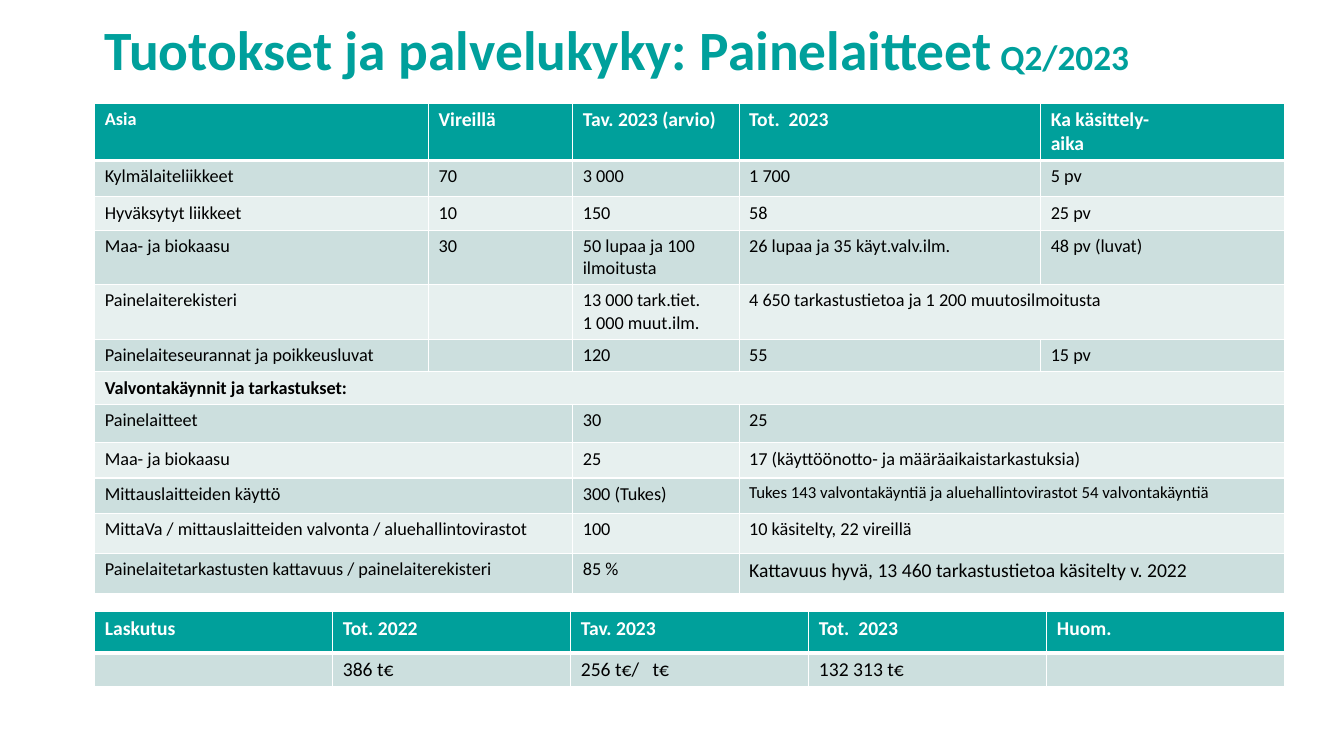
import pptx
import pptx.dml.color
import pptx.enum.text
import pptx.oxml
import pptx.oxml.ns
import pptx.util

THEME = {
    "font": "Calibri",
    "title": "00A09C", "header": "00A09B", "header_text": "FFFFFF", "border": "FFFFFF",
    "text": "000000", "bands": ("CCDFDE", "E7F0EF"),
    "title_size": 39.6, "quarter_size": 25.2,
    "large": 14, "body": 13, "small": 12,
    "thin_line": 1, "thick_line": 3,
}

presentation = pptx.Presentation()
presentation.slide_width = pptx.util.Inches(13.33)
presentation.slide_height = pptx.util.Inches(7.5)
WIDTH, HEIGHT = presentation.slide_width, presentation.slide_height
LEFT, TABLE_WIDTH = int(WIDTH * 0.0705), int(WIDTH * 0.8855)
NAMESPACE = pptx.oxml.ns.nsdecls("a")
slide = presentation.slides.add_slide(presentation.slide_layouts[6])


def style_run(run, size, color, bold):
    run.font.name = THEME["font"]
    run.font.size = pptx.util.Pt(size)
    run.font.bold = bold
    run.font.color.rgb = pptx.dml.color.RGBColor.from_string(color)


def add_filled_table(rows, top, column_shares, row_shares, body_size, special):
    """Shares are percentages of table width and slide height; None joins the cell to its left."""
    heights = [int(HEIGHT * share / 100) for share in row_shares]
    table = slide.shapes.add_table(len(rows), len(column_shares), LEFT, int(HEIGHT * top),
                                   TABLE_WIDTH, sum(heights)).table
    for column, share in zip(table.columns, column_shares):
        column.width = int(TABLE_WIDTH * share / 100)
    for row_index, texts in enumerate(rows):
        table.rows[row_index].height = heights[row_index]
        is_header = row_index == 0
        fill = THEME["header"] if is_header else THEME["bands"][(row_index - 1) % 2]
        for column_index, text in enumerate(texts):
            cell = table.cell(row_index, column_index)
            cell.fill.solid()
            cell.fill.fore_color.rgb = pptx.dml.color.RGBColor.from_string(fill)
            # White borders, thick between the header and the body
            for position, side in enumerate("LRTB"):
                is_thick = (row_index, side) in ((0, "B"), (1, "T"))
                points = THEME["thick_line" if is_thick else "thin_line"]
                border = pptx.oxml.parse_xml(
                    f'<a:ln{side} {NAMESPACE} w="{pptx.util.Pt(points)}"><a:solidFill>'
                    f'<a:srgbClr val="{THEME["border"]}"/></a:solidFill></a:ln{side}>')
                cell._tc.get_or_add_tcPr().insert(position, border)
            default = (THEME["large"], True) if is_header else (body_size, False)
            size, bold = special.get((row_index, column_index), default)
            color = THEME["header_text"] if is_header else THEME["text"]
            if text:
                cell.text_frame.text = text
            elif text is not None:
                # Keep empty cells as low as the text beside them
                end = pptx.oxml.parse_xml(f'<a:endParaRPr {NAMESPACE} sz="{size * 100}"/>')
                cell.text_frame.paragraphs[0]._p.append(end)
            for paragraph in cell.text_frame.paragraphs:
                for run in paragraph.runs:
                    style_run(run, size, color, bold)
        # Join each cell with the empty ones that follow it
        starts = [index for index, text in enumerate(texts) if text is not None]
        for start, stop in zip(starts, starts[1:] + [len(texts)]):
            if stop - start > 1:
                table.cell(row_index, start).merge(table.cell(row_index, stop - 1))


# Title
title = slide.shapes.add_textbox(LEFT, int(HEIGHT * 0.026), int(WIDTH * 0.863), int(HEIGHT * 0.088))
title.text_frame.word_wrap = True
title.text_frame.vertical_anchor = pptx.enum.text.MSO_ANCHOR.MIDDLE
paragraph = title.text_frame.paragraphs[0]
paragraph.line_spacing = 0.9
for text, size in (("Tuotokset ja palvelukyky: Painelaitteet", THEME["title_size"]),
                   (" Q2/2023", THEME["quarter_size"])):
    run = paragraph.add_run()
    run.text = text
    style_run(run, size, THEME["title"], True)

# Outputs and processing times
outputs = [
    ["Asia", "Vireillä", "Tav. 2023 (arvio)", "Tot.  2023", "Ka käsittely-\vaika"],
    ["Kylmälaiteliikkeet", "70", "3 000", "1 700", "5 pv"],
    ["Hyväksytyt liikkeet", "10", "150", "58", "25 pv"],
    ["Maa- ja biokaasu", "30", "50 lupaa ja 100 ilmoitusta", "26 lupaa ja 35 käyt.valv.ilm.",
     "48 pv (luvat)"],
    ["Painelaiterekisteri", "", "13 000 tark.tiet.\n1 000 muut.ilm.",
     "4 650 tarkastustietoa ja 1 200 muutosilmoitusta", None],
    ["Painelaiteseurannat ja poikkeusluvat", "", "120", "55", "15 pv"],
    ["Valvontakäynnit ja tarkastukset:", None, None, None, None],
    ["Painelaitteet", None, "30", "25", None],
    ["Maa- ja biokaasu", None, "25", "17 (käyttöönotto- ja määräaikaistarkastuksia)", None],
    ["Mittauslaitteiden käyttö", None, "300 (Tukes)",
     "Tukes 143 valvontakäyntiä ja aluehallintovirastot 54 valvontakäyntiä", None],
    ["MittaVa / mittauslaitteiden valvonta / aluehallintovirastot", None, "100",
     "10 käsitelty, 22 vireillä", None],
    ["Painelaitetarkastusten kattavuus / painelaiterekisteri", None, "85 %",
     "Kattavuus hyvä, 13 460 tarkastustietoa käsitelty v. 2022", None],
]
add_filled_table(
    outputs, 0.1365,
    [28.05, 12.12, 13.98, 25.34, 20.51],
    [7.6, 4.8, 4.4, 7.2, 7.27, 4.27, 4.33, 5.07, 4.67, 4.67, 5.33, 5.33],
    THEME["body"],
    {(0, 0): (THEME["body"], True), (6, 0): (THEME["body"], True),
     (9, 3): (THEME["small"], False), (11, 3): (THEME["large"], False)})

# Invoicing
invoicing = [
    ["Laskutus", "Tot. 2022", "Tav. 2023", "Tot.  2023", "Huom."],
    ["", "386 t€", "256 t€/   t€", "132 313 t€", ""],
]
add_filled_table(invoicing, 0.809, [20] * 5, [5.47, 3.33], THEME["large"], {})

presentation.save("out.pptx")
